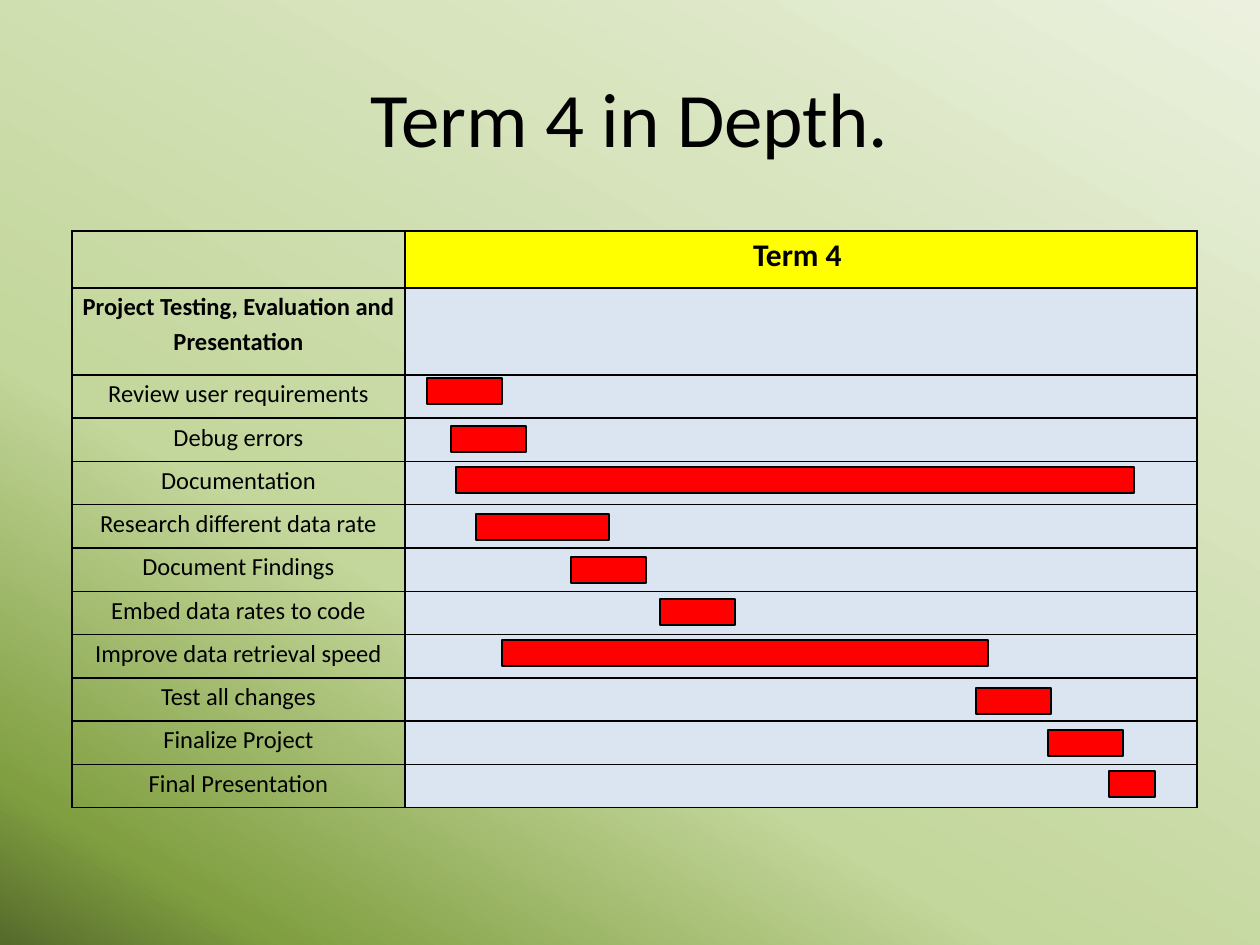
"""Build the Term 4 Gantt slide: a task table with a bar for each task."""
from lxml import etree
from pptx import Presentation
from pptx.dml.color import RGBColor
from pptx.enum.shapes import MSO_SHAPE
from pptx.enum.text import MSO_ANCHOR, PP_ALIGN
from pptx.oxml import parse_xml
from pptx.oxml.ns import nsdecls, qn
from pptx.util import Emu, Pt

RECT = MSO_SHAPE.RECTANGLE
MIDDLE = MSO_ANCHOR.MIDDLE
CENTER = PP_ALIGN.CENTER
SCALE = 914400 / 126
COLORS = {"text": "000000", "line": "000000", "header": "FFFF00",
          "row": "DBE5F1", "bar": "FF0000"}
STOPS = [(0, "EBF1DE"), (30, "D7E4BD"), (65, "C3D69B"),
         (90, "809F41"), (100, "556A2B")]
TASKS = [
    ("Review user requirements", 427, 378, 75),
    ("Debug errors", 451, 426, 75),
    ("Documentation", 456, 467, 678),
    ("Research different data rate", 476, 514, 133),
    ("Document Findings", 571, 557, 75),
    ("Embed data rates to code", 660, 599, 75),
    ("Improve data retrieval speed", 502, 640, 486),
    ("Test all changes", 976, 688, 75),
    ("Finalize Project", 1048, 730, 75),
    ("Final Presentation", 1109, 771, 46),
]
BAR_H = 26
TABLE_X, TABLE_Y, TABLE_W, TABLE_H = 72, 231, 1125, 577
COL_W = [333, 792]
HEAD_H = [57, 87]


def px(n):
    return Emu(round(n * SCALE))


def write(tf, text, size, bold=False, spacing=1.0):
    p = tf.paragraphs[0]
    p.alignment = CENTER
    p.line_spacing = spacing
    r = p.add_run()
    r.text = text
    for name, value in {"name": "Calibri", "size": Pt(size), "bold": bold}.items():
        setattr(r.font, name, value)
    r.font.color.rgb = RGBColor.from_string(COLORS["text"])


prs = Presentation()
prs.slide_width, prs.slide_height = px(1260), px(945)
s = prs.slides.add_slide(prs.slide_layouts[6])

fill = s.background.fill
fill.gradient()
grad = s.background._cSld.find(".//" + qn("a:gradFill"))
gs_list = grad.find(qn("a:gsLst"))
for gs in list(gs_list):
    gs_list.remove(gs)
for pos, color in STOPS:
    gs = etree.SubElement(gs_list, qn("a:gs"), pos=str(pos * 1000))
    etree.SubElement(gs, qn("a:srgbClr"), val=color)
lin = grad.find(qn("a:lin"))
lin.set("ang", str(120 * 60000))
lin.set("scaled", "0")

tf = s.shapes.add_textbox(px(63), px(38), px(1134), px(157)).text_frame
tf.word_wrap = True
tf.vertical_anchor = MIDDLE
write(tf, "Term 4 in Depth.", 44)

labels = ["", "Project Testing, Evaluation and Presentation"] + [t[0] for t in TASKS]
table = s.shapes.add_table(len(labels), 2, px(TABLE_X), px(TABLE_Y),
                           px(TABLE_W), px(TABLE_H)).table
table.first_row = table.horz_banding = False
for col, width in zip(table.columns, COL_W):
    col.width = px(width)
task_h = (TABLE_H - sum(HEAD_H)) / len(TASKS)
heights = HEAD_H + [task_h] * len(TASKS)
for row, height in zip(table.rows, heights):
    row.height = px(height)

for cell in table.iter_cells():
    for name, value in {"margin_left": 8, "margin_right": 8,
                        "margin_top": 0, "margin_bottom": 0}.items():
        setattr(cell, name, px(value))
    tc_pr = cell._tc.get_or_add_tcPr()
    for side in ("lnL", "lnR", "lnT", "lnB"):
        tc_pr.append(parse_xml(
            f'<a:{side} {nsdecls("a")} w="12700"><a:solidFill>'
            f'<a:srgbClr val="{COLORS["line"]}"/></a:solidFill></a:{side}>'))

for i, label in enumerate(labels):
    task, span = table.cell(i, 0), table.cell(i, 1)
    task.fill.background()
    span.fill.solid()
    span.fill.fore_color.rgb = RGBColor.from_string(COLORS["row" if i else "header"])
    if label:
        write(task.text_frame, label, 14, i == 1, 1.15)
write(table.cell(0, 1).text_frame, "Term 4 ", 18, True, 1.15)

for label, x, y, w in TASKS:
    sp = s.shapes.add_shape(RECT, px(x), px(y), px(w), px(BAR_H))
    sp.shadow.inherit = False
    sp.fill.solid()
    sp.fill.fore_color.rgb = RGBColor.from_string(COLORS["bar"])
    sp.line.color.rgb = RGBColor.from_string(COLORS["line"])
    sp.line.width = Pt(0.75)

prs.save("out.pptx")
